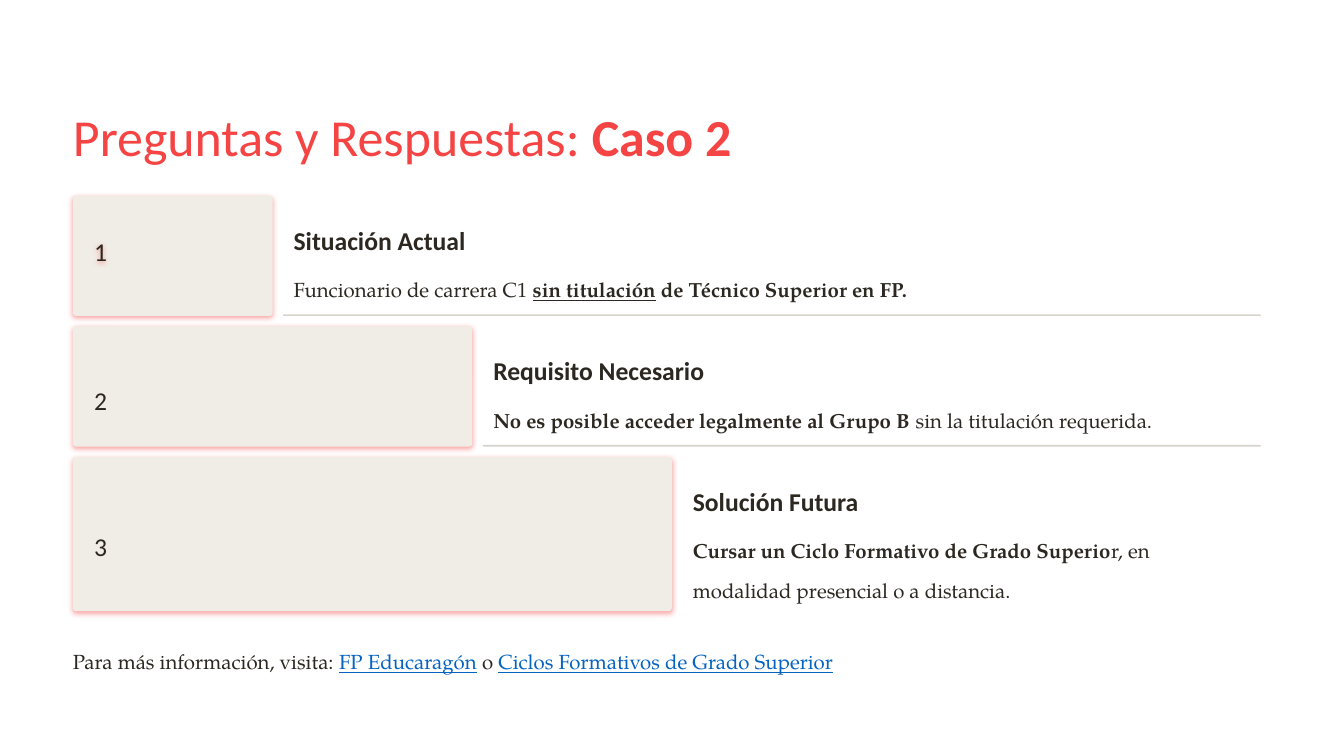
"""Build the "Caso 2" slide: three widening steps with a heading and an explanation each."""
from lxml import etree
from pptx import Presentation
from pptx.dml.color import RGBColor
from pptx.enum.shapes import MSO_SHAPE as SHAPE
from pptx.enum.text import PP_ALIGN as ALIGN
from pptx.oxml import parse_xml
from pptx.oxml.ns import nsdecls
from pptx.util import Pt

RED = RGBColor(0xF4, 0x44, 0x44)
INK = RGBColor(0x2C, 0x28, 0x21)
SAND = RGBColor(0xF0, 0xED, 0xE6)
RULE = RGBColor(0xD6, 0xD3, 0xCC)
LINK = RGBColor(0x05, 0x63, 0xC1)
SANS, SERIF = "Calibri", "TeX Gyre Pagella"
LEFT, RIGHT = 62.6, 1080.7
TOP, STEP_Y, STEP_X, GAP = 167.8, 112, 171.1, 18
GLOW = (
    f'<a:effectLst {nsdecls("a")}>'
    '<a:outerShdw blurRad="57150" dist="19050" dir="5400000" algn="ctr" rotWithShape="0">'
    f'<a:srgbClr val="{RED}"><a:alpha val="50000"/></a:srgbClr>'
    "</a:outerShdw></a:effectLst>"
)

prs = Presentation()
prs.slide_width, prs.slide_height = Pt(1152), Pt(648)
s = prs.slides.add_slide(prs.slide_layouts[6])


def add_text(x, y, w, h, runs, size, font, spacing, align=ALIGN.LEFT):
    sp = s.shapes.add_textbox(Pt(x), Pt(y), Pt(w), Pt(h))
    tf = sp.text_frame
    tf.word_wrap = True
    tf.margin_left = tf.margin_right = tf.margin_top = tf.margin_bottom = 0
    p = tf.paragraphs[0]
    p.alignment = align
    p.line_spacing = spacing
    for text, color, bold, underline in runs:
        r = p.add_run()
        r.text = text
        r.font.name, r.font.size = font, Pt(size)
        r.font.bold, r.font.underline = bold, underline
        r.font.color.rgb = color
    return sp


def add_block(x, y, w, h, color, corner):
    sp = s.shapes.add_shape(SHAPE.ROUNDED_RECTANGLE, Pt(x), Pt(y), Pt(w), Pt(h))
    sp.adjustments[0] = corner
    sp.fill.solid()
    sp.fill.fore_color.rgb = color
    sp.line.fill.background()
    sp.shadow.inherit = False
    return sp


add_text(LEFT, 76.3, 621, 56, [
    ("Preguntas y Respuestas: ", RED, False, False),
    ("Caso 2", RED, True, False),
], 44.5, SANS, 1.25)

steps = [
    ("Situación Actual", 103, 34, 1, ALIGN.LEFT, 551.5, 29, [
        ("Funcionario de carrera C1 ", INK, False, False),
        ("sin titulación", INK, True, True),
        (" de Técnico Superior en FP.", INK, True, False),
    ]),
    ("Requisito Necesario", 103, 34, 1.61, ALIGN.CENTER, 658, 29, [
        ("No es posible acceder legalmente al Grupo B ", INK, True, False),
        ("sin la titulación requerida.", INK, False, False),
    ]),
    ("Solución Futura", 132, 47.5, 1.61, ALIGN.CENTER, 478, 57, [
        ("Cursar un Ciclo Formativo de Grado Superio", INK, True, False),
        ("r, en modalidad presencial o a distancia.", INK, False, False),
    ]),
]

for n, (heading, height, drop, spacing, align, body_w, body_h, body) in enumerate(steps, 1):
    y = TOP + (n - 1) * STEP_Y
    bar_end = LEFT + n * STEP_X
    x = bar_end + GAP
    bar = add_block(LEFT, y, n * STEP_X, height, SAND, 2.65 / height)
    number = add_text(LEFT + GAP, y + drop, 10.8, 36,
                      [(str(n), INK, False, False)], 22, SANS, spacing, align)
    for sp in (bar, number) if n == 1 else (bar,):
        sp.shadow.inherit = False
        props = sp.element.spPr
        props.replace(props.find("{*}effectLst"), parse_xml(GLOW))
    add_text(x, y + GAP, 223, 28, [(heading, INK, True, False)], 22, SANS, 1.25)
    add_text(x, y + 56.6, body_w, body_h, body, 17.5, SERIF, 1.63)
    if n < len(steps):
        rule_x = bar_end + GAP / 2
        add_block(rule_x, y + 101.6, RIGHT - rule_x, 1.4, RULE, 0.5)

add_text(LEFT, 542.9, 1026.7, 29, [
    ("Para más información, visita: ", INK, False, False),
    ("FP Educaragón", LINK, False, True),
    (" ", RED, False, False),
    ("o ", INK, False, False),
    ("Ciclos Formativos de Grado Superior", LINK, False, True),
], 17.5, SERIF, 1.63)

prs.save("out.pptx")
